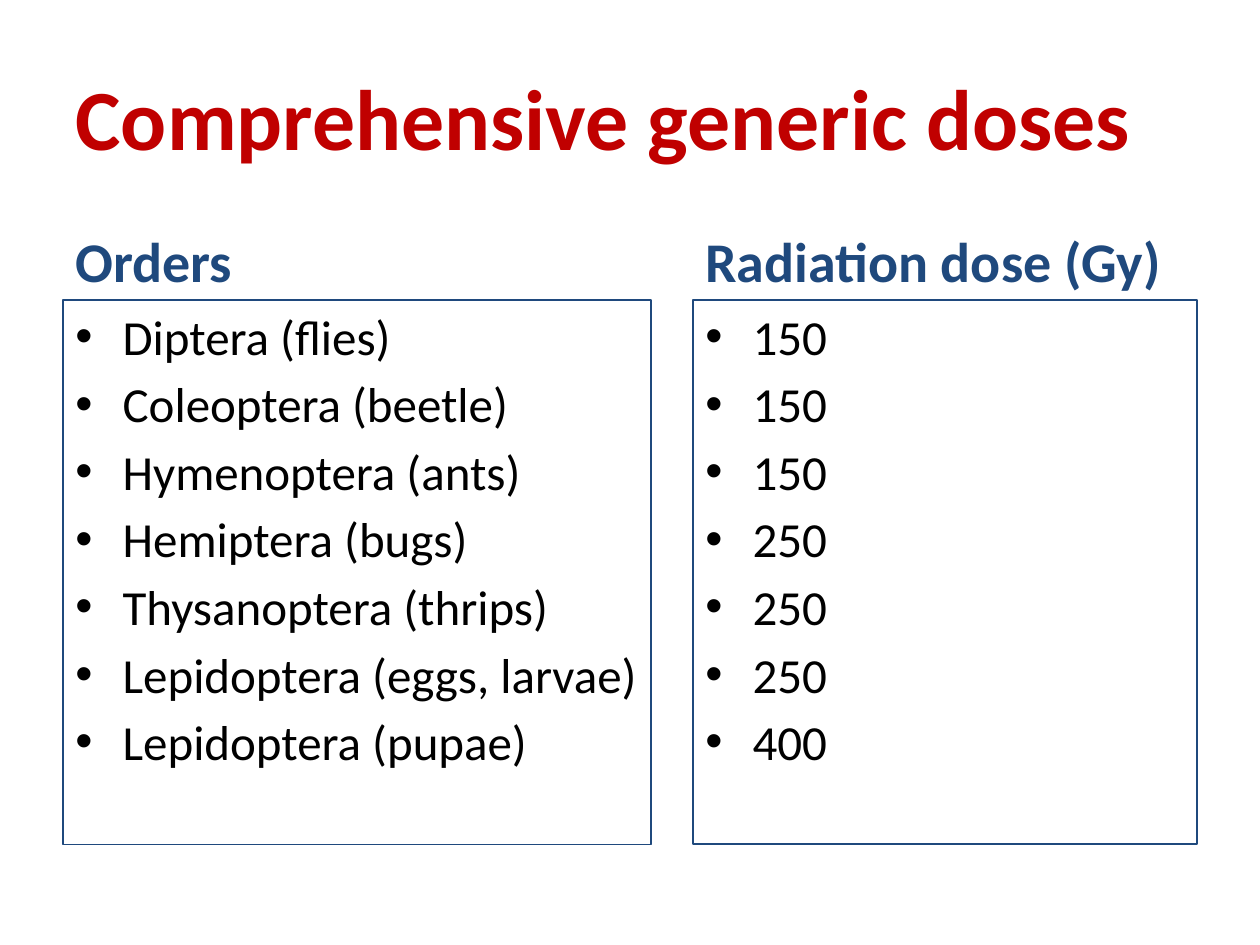
from pptx import Presentation
from pptx.dml.color import RGBColor
from pptx.enum.shapes import MSO_SHAPE
from pptx.enum.text import MSO_ANCHOR, PP_ALIGN
from pptx.oxml.ns import qn
from pptx.util import Pt
from lxml.etree import SubElement

COLORS = {"title": "C00000", "accent": "1F497D", "text": "000000"}
FONT = "Calibri"
COLUMNS = [
    {
        "heading": "Orders",
        "items": [
            "Diptera (flies)",
            "Coleoptera (beetle)",
            "Hymenoptera (ants)",
            "Hemiptera (bugs)",
            "Thysanoptera (thrips)",
            "Lepidoptera (eggs, larvae)",
            "Lepidoptera (pupae)",
        ],
        "left": 36,
        "heading_width": 318,
        "list_width": 336,
        "border": 0.75,
    },
    {
        "heading": "Radiation dose (Gy)",
        "items": ["150", "150", "150", "250", "250", "250", "400"],
        "left": 396,
        "heading_width": 288,
        "list_width": 288,
        "border": 1.5,
    },
]


def add_bullet(paragraph, indent):
    properties = paragraph._p.get_or_add_pPr()
    properties.set("marL", str(Pt(indent)))
    properties.set("indent", str(-Pt(indent)))
    SubElement(properties, qn("a:buFont"), typeface="Arial")
    SubElement(properties, qn("a:buChar"), char="•")


def write_text(frame, lines, size, color, bold=False, anchor=MSO_ANCHOR.TOP,
               indent=0, gap=0):
    frame.word_wrap = True
    frame.vertical_anchor = anchor
    for index, line in enumerate(lines):
        paragraph = frame.add_paragraph() if index else frame.paragraphs[0]
        if indent:
            add_bullet(paragraph, indent)
        paragraph.alignment = PP_ALIGN.LEFT
        paragraph.space_before = Pt(gap if index else 0)
        span = paragraph.add_run()
        span.text = line
        span.font.name = FONT
        span.font.size = Pt(size)
        span.font.bold = bold
        span.font.color.rgb = RGBColor.from_string(COLORS[color])


class Page:
    def __init__(self, deck):
        self.slide = deck.slides.add_slide(deck.slide_layouts[5])

    def title(self, text, left, top, width, height):
        box = self.slide.shapes.title
        box.left, box.top = Pt(left), Pt(top)
        box.width, box.height = Pt(width), Pt(height)
        write_text(box.text_frame, [text], 49, "title", bold=True,
                   anchor=MSO_ANCHOR.MIDDLE)

    def heading(self, text, left, top, width, height):
        box = self.slide.shapes.add_textbox(Pt(left), Pt(top), Pt(width), Pt(height))
        write_text(box.text_frame, [text], 32, "accent", bold=True,
                   anchor=MSO_ANCHOR.BOTTOM)

    def bullet_list(self, items, left, top, width, height, border):
        box = self.slide.shapes.add_shape(
            MSO_SHAPE.RECTANGLE, Pt(left), Pt(top), Pt(width), Pt(height))
        box.shadow.inherit = False
        box.fill.background()
        box.line.color.rgb = RGBColor.from_string(COLORS["accent"])
        box.line.width = Pt(border)
        write_text(box.text_frame, items, 28, "text", indent=27, gap=5)


def main():
    deck = Presentation()
    deck.slide_width, deck.slide_height = Pt(720), Pt(540)
    page = Page(deck)
    page.title("Comprehensive generic doses", 36, 21.6, 648, 90)
    heading_top, heading_height, list_height = 121, 50.4, 311
    list_top = heading_top + heading_height
    for column in COLUMNS:
        page.heading(column["heading"], column["left"], heading_top,
                     column["heading_width"], heading_height)
        page.bullet_list(column["items"], column["left"], list_top,
                         column["list_width"], list_height, column["border"])
    deck.save("out.pptx")


if __name__ == "__main__":
    main()
